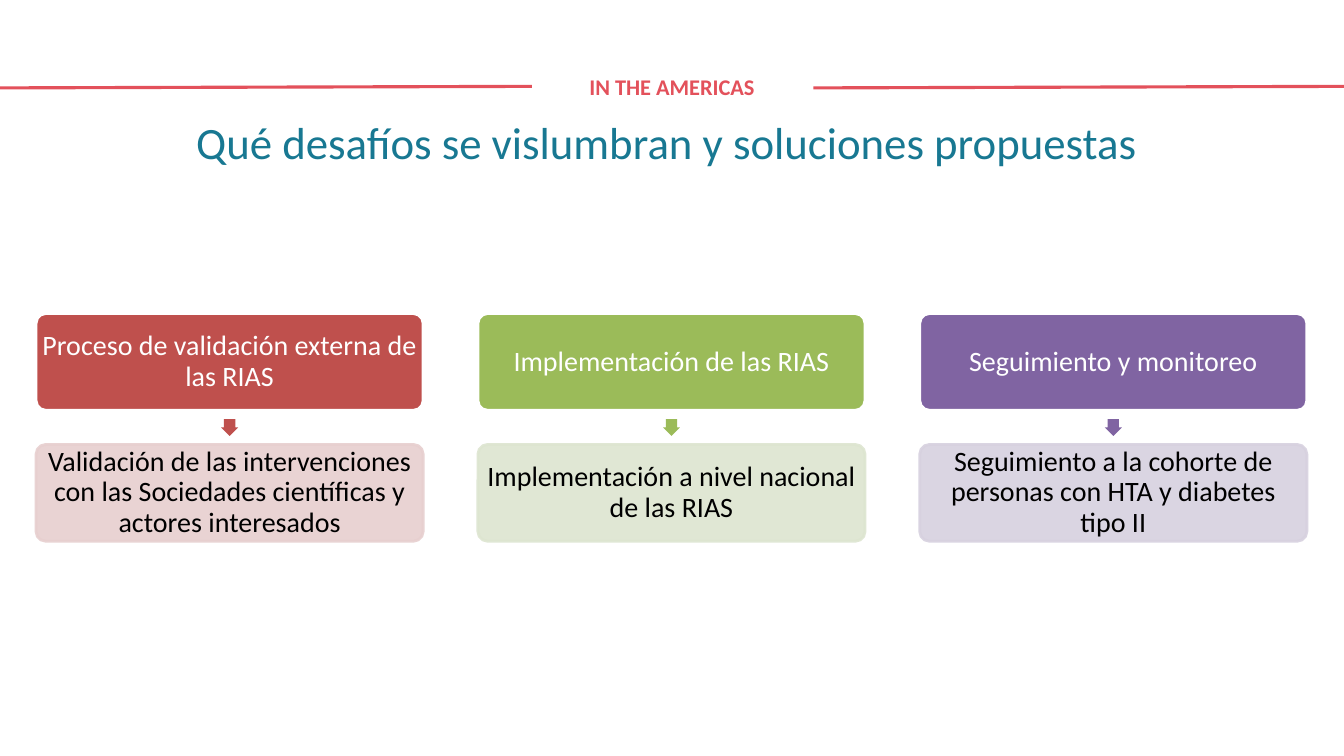
from lxml import etree
from pptx import Presentation
from pptx.dml.color import RGBColor
from pptx.enum import shapes, text
from pptx.oxml import ns
from pptx.util import Pt


def tint(fill, hue, alpha=None):
    fill.solid()
    fill.fore_color.rgb = RGBColor.from_string(hue)
    if alpha:
        node = fill._xPr.find(ns.qn("a:solidFill"))[0]
        etree.SubElement(node, ns.qn("a:alpha"), val=str(alpha * 1000))


def write(shape, words, size, hue, bold=False, anchor="TOP", pad=(7.2, 3.6), gap=1.0):
    frame = shape.text_frame
    frame.word_wrap = True
    frame.auto_size = text.MSO_AUTO_SIZE.NONE
    frame.vertical_anchor = text.MSO_ANCHOR[anchor]
    frame.margin_left = frame.margin_right = Pt(pad[0])
    frame.margin_top = frame.margin_bottom = Pt(pad[1])
    para = frame.paragraphs[0]
    para.alignment = text.PP_ALIGN.CENTER
    para.line_spacing = gap
    run = para.add_run()
    run.text = words
    run.font.name = "Calibri"
    run.font.size = Pt(size)
    run.font.bold = bold
    tint(run.font.fill, hue)


deck = Presentation()
deck.slide_width, deck.slide_height = Pt(960), Pt(540)
slide = deck.slides.add_slide(deck.slide_layouts[5])
items = slide.shapes
kinds = shapes.MSO_SHAPE

for left in (0, 581):
    rule = items.add_connector(shapes.MSO_CONNECTOR.STRAIGHT, Pt(left), Pt(62.8), Pt(left + 380), Pt(61.7))
    tint(rule.line.fill, "E3515B")
    rule.line.width = Pt(2.25)
    etree.SubElement(rule._element.spPr, ns.qn("a:effectLst"))

label = items.add_textbox(Pt(380), Pt(48.5), Pt(200), Pt(26.6))
write(label, "IN THE AMERICAS", 16, "E3515B", bold=True)

title = items.title
title.left, title.top, title.width, title.height = Pt(48), Pt(78), Pt(864), Pt(90)
write(title, "Qué desafíos se vislumbran y soluciones propuestas ", 32, "187892")

steps = [
    ("BF504D", "E7CFCF", "Proceso de validación externa de las RIAS",
     "Validación de las intervenciones con las Sociedades científicas y actores interesados"),
    ("9BBB59", "DDE5D0", "Implementación de las RIAS",
     "Implementación a nivel nacional de las RIAS"),
    ("8064A2", "D7D1DF", "Seguimiento y monitoreo",
     "Seguimiento a la cohorte de personas con HTA y diabetes tipo II"),
]
wide, high, side = 276.5, 69.1, 12.1
for col, (dark, pale, head, body) in enumerate(steps):
    left = 25.8 + col * 315.6
    rows = [(224, dark, "FFFFFF", None, head, "FFFFFF"),
            (317.5, pale, pale, 90, body, "000000")]
    for top, fill, edge, alpha, words, ink in rows:
        box = items.add_shape(kinds.ROUNDED_RECTANGLE, Pt(left), Pt(top), Pt(wide), Pt(high))
        box.adjustments[0] = 0.1
        box.shadow.inherit = False
        tint(box.fill, fill, alpha)
        tint(box.line.fill, edge, alpha)
        box.line.width = Pt(2)
        write(box, words, 20, ink, anchor="MIDDLE", pad=(2, 2), gap=0.9)
    arrow = items.add_shape(kinds.DOWN_ARROW, Pt(left + (wide - side) / 2), Pt(299.3), Pt(side), Pt(side))
    arrow.adjustments[0] = 0.67
    arrow.shadow.inherit = False
    tint(arrow.fill, dark)
    arrow.line.fill.background()

deck.save("out.pptx")
